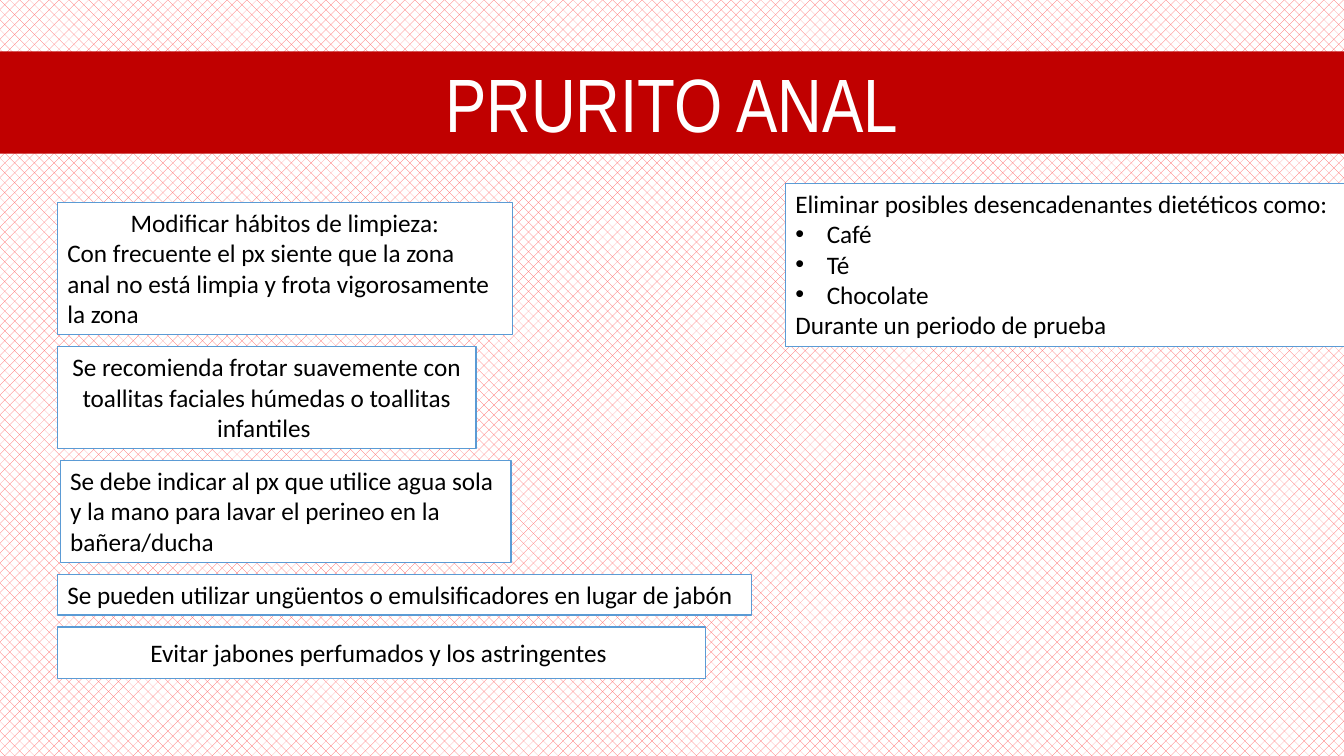
import pptx
import pptx.dml.color
import pptx.enum.dml
import pptx.enum.text
import pptx.oxml
import pptx.oxml.ns
import pptx.util

Pt = pptx.util.Pt
RGBColor = pptx.dml.color.RGBColor
ALIGN = pptx.enum.text.PP_ALIGN
ANCHOR = pptx.enum.text.MSO_ANCHOR
AUTO_SIZE = pptx.enum.text.MSO_AUTO_SIZE

RED = RGBColor(0xC0, 0x00, 0x00)
PINK = RGBColor(0xFF, 0x5D, 0x5D)
BLUE = RGBColor(0x5B, 0x9B, 0xD5)
WHITE = RGBColor(0xFF, 0xFF, 0xFF)
BLACK = RGBColor(0x00, 0x00, 0x00)

# Content: each paragraph is (style, text)
TITLE = "PRURITO ANAL"
# left, width, height, wraps, anchor, paragraphs
ADVICE = [
    (41, 325, 94.3, True, ANCHOR.TOP, [
        ("center", "Modificar hábitos de limpieza:"),
        ("left", "Con frecuente el px siente que la zona anal no está limpia "
                 "y frota vigorosamente la zona")]),
    (41, 299, 72.7, True, ANCHOR.TOP, [
        ("center", "Se recomienda frotar suavemente con toallitas faciales "
                   "húmedas o toallitas infantiles ")]),
    (43, 322, 72.7, True, ANCHOR.TOP, [
        ("left", "Se debe indicar al px que utilice agua sola y la mano para "
                 "lavar el perineo en la bañera/ducha")]),
    (41, 496, 29.1, False, ANCHOR.TOP, [
        ("left", "Se pueden utilizar ungüentos o emulsificadores en lugar de jabón")]),
    (41, 463, 36.7, True, ANCHOR.MIDDLE, [
        ("center", "Evitar jabones perfumados y los astringentes ")]),
]
DIET = (561, 399.5, 116.6, False, ANCHOR.TOP, [
    ("left", "Eliminar posibles desencadenantes dietéticos como:"),
    ("bullet", "Café"),
    ("bullet", "Té"),
    ("bullet", "Chocolate"),
    ("left", "Durante un periodo de prueba")])
ADVICE_TOP, ADVICE_GAP, DIET_TOP = 144.7, 8.6, 131
BULLET_INDENT = Pt(22.5)


def add_bullet(paragraph):
    properties = paragraph._p.get_or_add_pPr()
    properties.set("marL", str(BULLET_INDENT))
    properties.set("indent", str(-BULLET_INDENT))
    for tag, name, value in (("a:buFont", "typeface", "Arial"), ("a:buChar", "char", "•")):
        element = pptx.oxml.parse_xml(f"<{tag} {pptx.oxml.ns.nsdecls('a')} {name}='{value}'/>")
        properties.append(element)


def add_box(slide, top, box):
    left, width, height, wraps, anchor, paragraphs = box
    shape = slide.shapes.add_textbox(Pt(left), Pt(top), Pt(width), Pt(height))
    shape.fill.solid()
    shape.fill.fore_color.rgb = WHITE
    shape.line.color.rgb = BLUE
    shape.line.width = Pt(1)
    frame = shape.text_frame
    frame.word_wrap = wraps
    frame.vertical_anchor = anchor
    frame.auto_size = AUTO_SIZE.SHAPE_TO_FIT_TEXT if anchor == ANCHOR.TOP else AUTO_SIZE.NONE
    for index, (style, text) in enumerate(paragraphs):
        paragraph = frame.add_paragraph() if index else frame.paragraphs[0]
        paragraph.text = text
        paragraph.alignment = ALIGN.CENTER if style == "center" else ALIGN.LEFT
        paragraph.font.name = "Calibri"
        paragraph.font.size = Pt(18)
        paragraph.font.color.rgb = BLACK
        if style == "bullet":
            add_bullet(paragraph)


def main():
    presentation = pptx.Presentation()
    presentation.slide_width, presentation.slide_height = Pt(960), Pt(540)
    slide = presentation.slides.add_slide(presentation.slide_layouts[5])

    # Patterned background
    background = slide.background.fill
    background.patterned()
    background.pattern = pptx.enum.dml.MSO_PATTERN.PERCENT_30
    background.fore_color.rgb = PINK
    background.back_color.rgb = WHITE

    # Title band
    title = slide.shapes.title
    title.left, title.top, title.width, title.height = Pt(0), Pt(36.7), Pt(960), Pt(73)
    title.fill.solid()
    title.fill.fore_color.rgb = RED
    title.text_frame.text = TITLE
    title.text_frame.auto_size = AUTO_SIZE.NONE
    title.text_frame.vertical_anchor = ANCHOR.MIDDLE
    paragraph = title.text_frame.paragraphs[0]
    paragraph.alignment = ALIGN.CENTER
    paragraph.font.name = "Arial Narrow"
    paragraph.font.size = Pt(54)
    paragraph.font.color.rgb = WHITE

    # Hygiene advice stacked on the left, diet on the right
    top = ADVICE_TOP
    for box in ADVICE:
        add_box(slide, top, box)
        top += box[2] + ADVICE_GAP
    add_box(slide, DIET_TOP, DIET)

    presentation.save("out.pptx")


if __name__ == "__main__":
    main()
